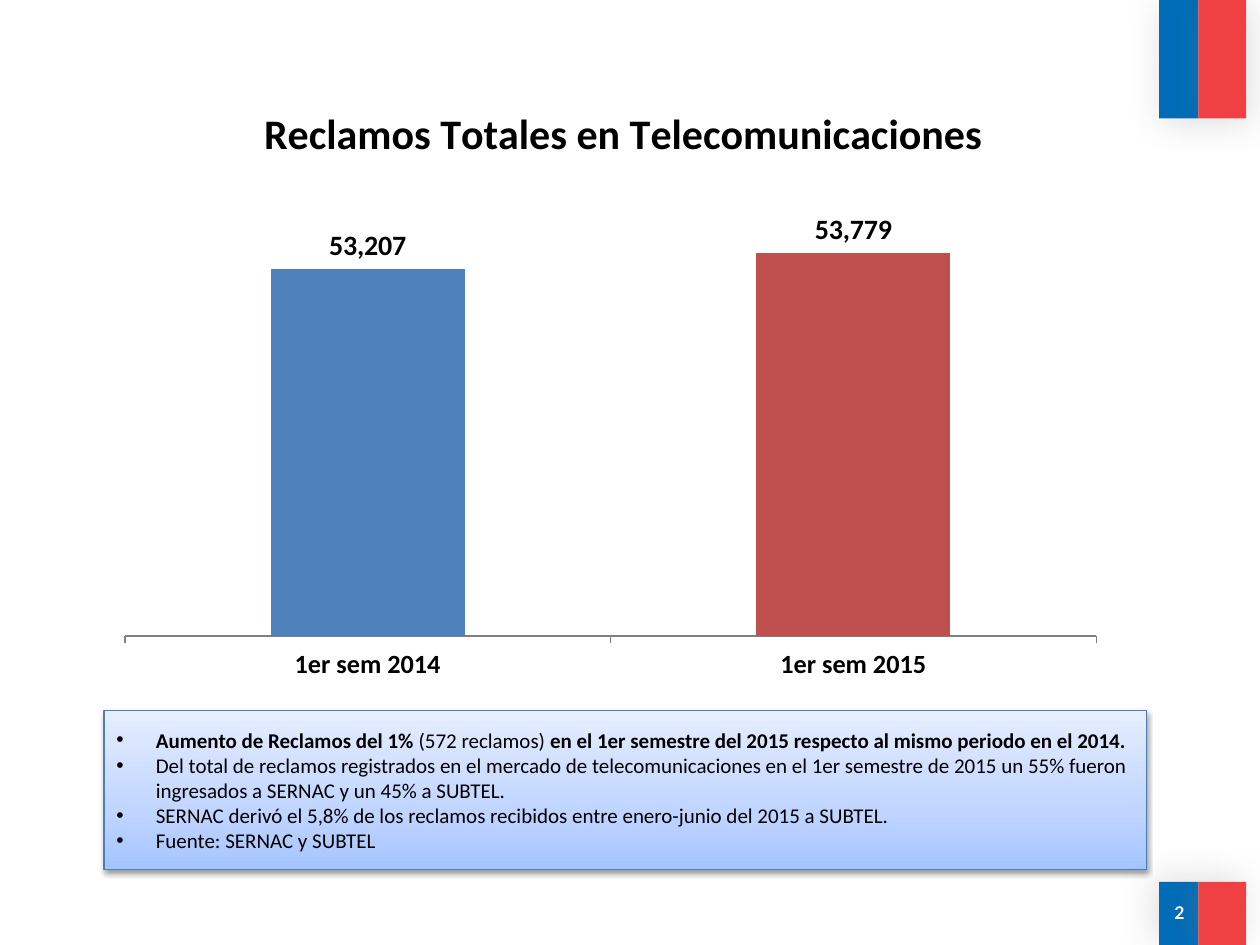
from lxml import etree
from pptx import Presentation
from pptx import util as u
from pptx.chart.data import CategoryChartData
from pptx.dml.color import RGBColor
from pptx.enum import chart as charts, shapes, text
from pptx.oxml import parse_xml
from pptx.oxml.ns import nsdecls, qn

Pt = u.Pt
BLACK = RGBColor(0, 0, 0)
WHITE = RGBColor(255, 255, 255)
FLAG_BLUE = RGBColor(0x00, 0x6C, 0xB7)
FLAG_RED = RGBColor(0xEF, 0x41, 0x44)
BAR_BLUE = RGBColor(0x4F, 0x81, 0xBD)
BAR_RED = RGBColor(0xC0, 0x50, 0x4D)
BORDER = RGBColor(0x4B, 0x7E, 0xBC)
SHADE_GREY = RGBColor(0x80, 0x80, 0x80)
GRADIENT = [(0, RGBColor(0xA4, 0xC4, 0xFF)),
            (35, RGBColor(0xBF, 0xD4, 0xFF)),
            (100, RGBColor(0xE6, 0xEE, 0xFF))]

# Each paragraph is a list of (wording, bold) runs.
FINDINGS = [
    [("Aumento de Reclamos del 1% ", True), ("(572 reclamos) ", False),
     ("en el 1er semestre del 2015 respecto al mismo periodo en el 2014.", True)],
    [("Del total de reclamos registrados en el mercado de telecomunicaciones "
      "en el 1er semestre de 2015 un 55% fueron ingresados a SERNAC "
      "y un 45% a SUBTEL.", False)],
    [("SERNAC derivó el 5,8% de los reclamos recibidos entre enero-junio "
      "del 2015 a SUBTEL.", False)],
    [("Fuente: SERNAC y SUBTEL", False)],
]


def style_font(font, size, color=BLACK, bold=False, name="Calibri"):
    font.name, font.size, font.bold = name, Pt(size), bold
    font.color.rgb = color


def add_shadow(shape, color, alpha, blur, distance, angle):
    """Outer shadow: alpha in percent, lengths in points, angle in degrees."""
    shape.shadow.inherit = False
    effects = shape._element.spPr.find(qn("a:effectLst"))
    effects.append(parse_xml(
        f'<a:outerShdw {nsdecls("a")} blurRad="{Pt(blur)}" dist="{Pt(distance)}" '
        f'dir="{angle * 60000}" algn="ctr" rotWithShape="0">'
        f'<a:srgbClr val="{color}"><a:alpha val="{alpha * 1000}"/></a:srgbClr>'
        '</a:outerShdw>'))


def add_rectangle(page, left, top, width, height):
    return page.shapes.add_shape(shapes.MSO_SHAPE.RECTANGLE, Pt(left), Pt(top),
                                 Pt(width), Pt(height))


def add_flag(page, top, height, shadow_angle):
    for left, width, color in ((662.4, 22.4, FLAG_BLUE), (684.8, 27.3, FLAG_RED)):
        band = add_rectangle(page, left, top, width, height)
        band.fill.solid()
        band.fill.fore_color.rgb = color
        band.line.fill.background()
        add_shadow(band, SHADE_GREY, 25, 20, 3, shadow_angle)


def add_page_number(page, number):
    box = page.shapes.add_textbox(Pt(640.8), Pt(514), Pt(43.2), Pt(15.2))
    frame = box.text_frame
    frame.word_wrap = True
    frame.vertical_anchor = text.MSO_ANCHOR.MIDDLE
    frame.text = number
    frame.paragraphs[0].alignment = text.PP_ALIGN.RIGHT
    style_font(frame.paragraphs[0].runs[0].font, 10, WHITE, True, "Lato")


def fill_gradient(shape, stops, angle):
    shape.fill.gradient()
    shape.fill.gradient_angle = 0
    gradient = shape._element.spPr.find(qn("a:gradFill"))
    gradient.find(qn("a:lin")).set("ang", str(angle * 60000))
    stop_list = gradient.find(qn("a:gsLst"))
    for stop in list(stop_list):
        stop_list.remove(stop)
    for position, color in stops:
        stop = etree.SubElement(stop_list, qn("a:gs"), pos=str(position * 1000))
        etree.SubElement(stop, qn("a:srgbClr"), val=str(color))


def add_bullet(para, indent):
    properties = para._p.get_or_add_pPr()
    properties.set("marL", str(Pt(indent)))
    properties.set("indent", str(-Pt(indent)))
    etree.SubElement(properties, qn("a:buFont"), typeface="Arial")
    etree.SubElement(properties, qn("a:buChar"), char="•")


def add_findings(page):
    panel = add_rectangle(page, 59.5, 406, 595.5, 91)
    fill_gradient(panel, GRADIENT, 270)
    panel.line.color.rgb = BORDER
    panel.line.width = Pt(0.75)
    add_shadow(panel, BLACK, 38, 3.1, 1.6, 90)
    frame = panel.text_frame
    frame.word_wrap = True
    frame.vertical_anchor = text.MSO_ANCHOR.MIDDLE
    for index, runs in enumerate(FINDINGS):
        para = frame.add_paragraph() if index else frame.paragraphs[0]
        para.alignment = text.PP_ALIGN.LEFT
        add_bullet(para, 22.5)
        for wording, bold in runs:
            span = para.add_run()
            span.text = wording
            style_font(span.font, 12, bold=bold)


def place_in_chart(element, **fractions):
    """Fix the place of a title or plot area, in fractions of the chart."""
    old = element.find(qn("c:layout"))
    if old is not None:
        element.remove(old)
    layout = etree.Element(qn("c:layout"))
    manual = etree.SubElement(layout, qn("c:manualLayout"))
    if "w" in fractions:
        etree.SubElement(manual, qn("c:layoutTarget"), val="inner")
    for side in ("x", "y"):
        etree.SubElement(manual, qn(f"c:{side}Mode"), val="edge")
    for key, value in fractions.items():
        etree.SubElement(manual, qn(f"c:{key}"), val=str(value))
    rich_text = element.find(qn("c:tx"))
    element.insert(0 if rich_text is None else 1, layout)


def add_complaints_chart(page):
    data = CategoryChartData()
    data.categories = ["1er sem 2014", "1er sem 2015"]
    data.add_series("Reclamos", (53207, 53779))
    chart = page.shapes.add_chart(charts.XL_CHART_TYPE.COLUMN_CLUSTERED, Pt(59.8),
                                  Pt(49), Pt(578.2), Pt(345.6), data).chart
    style_font(chart.font, 10)
    chart.has_legend = False

    chart.has_title = True
    title = chart.chart_title
    title.text_frame.text = "Reclamos Totales en Telecomunicaciones"
    style_font(title.text_frame.paragraphs[0].runs[0].font, 24, bold=True)
    title.include_in_layout = False
    place_in_chart(title._element, x=0.15, y=0.02)
    place_in_chart(chart._chartSpace.chart.plotArea, x=0.02, y=0.22, w=0.96, h=0.69)

    values = chart.value_axis
    values.minimum_scale, values.maximum_scale = 40000, 55000
    values.has_major_gridlines = False
    values.visible = False
    categories = chart.category_axis
    categories.major_tick_mark = charts.XL_TICK_MARK.OUTSIDE
    categories.format.line.color.rgb = SHADE_GREY
    style_font(categories.tick_labels.font, 15, bold=True)

    plot = chart.plots[0]
    plot.gap_width = 150
    plot.vary_by_categories = False
    for index, color in enumerate((BAR_BLUE, BAR_RED)):
        fill = plot.series[0].points[index].format.fill
        fill.solid()
        fill.fore_color.rgb = color
    plot.has_data_labels = True
    labels = plot.data_labels
    labels.show_value = True
    labels.position = charts.XL_LABEL_POSITION.OUTSIDE_END
    labels.number_format = "#,##0"
    labels.number_format_is_linked = False
    style_font(labels.font, 16, bold=True)


def main():
    deck = Presentation()
    deck.slide_width, deck.slide_height = Pt(720), Pt(540)
    page = deck.slides.add_slide(deck.slide_layouts[6])
    add_flag(page, 0, 67.7, 45)
    add_flag(page, 504, 36, 215)
    add_page_number(page, "2")
    add_findings(page)
    add_complaints_chart(page)
    deck.save("out.pptx")


if __name__ == "__main__":
    main()
